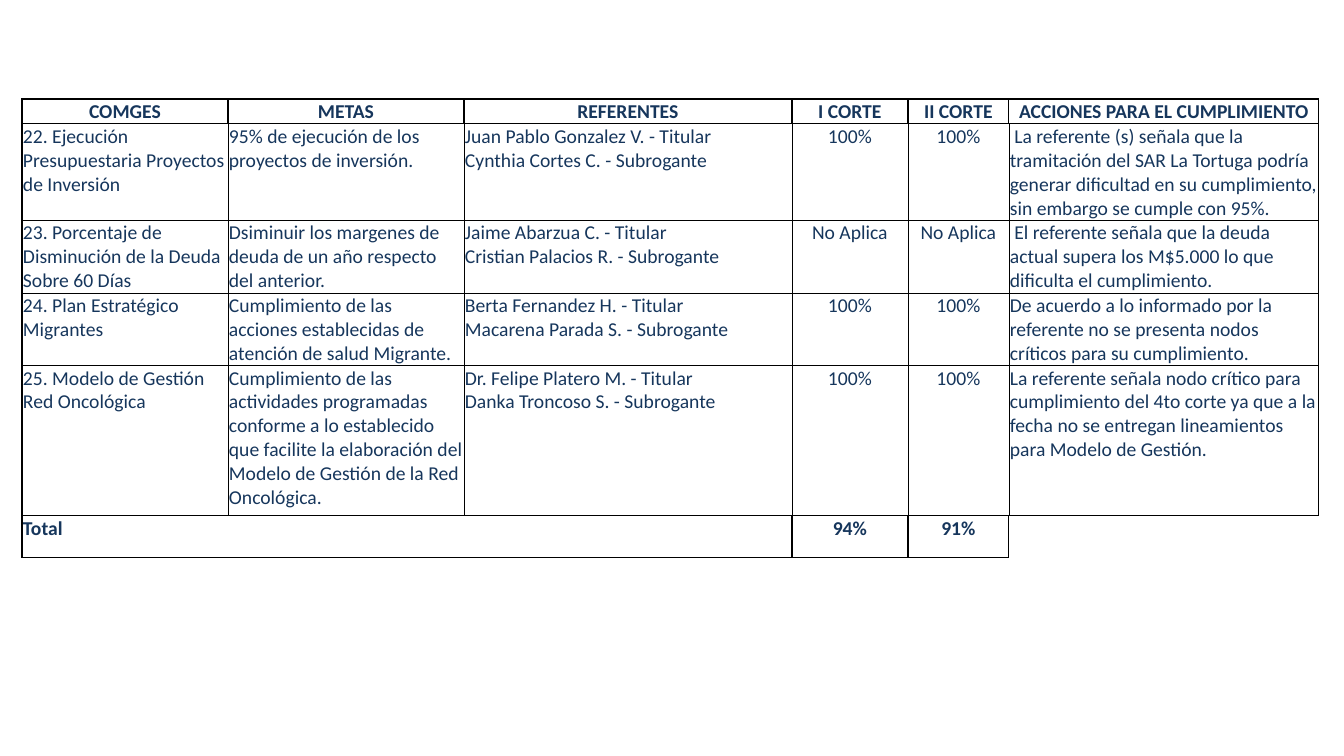
import copy

import pptx
import pptx.dml.color
import pptx.enum.text
import pptx.oxml
import pptx.oxml.ns
import pptx.util

SCALE = 914400 / 100.8
COLORS = {"text": "16365C", "line": "000000"}
ALIGN = pptx.enum.text.PP_ALIGN

HEADERS = ["COMGES", "METAS", "REFERENTES", "I CORTE", "II CORTE",
           "ACCIONES PARA EL CUMPLIMIENTO"]
GOALS = [
    ["22. Ejecución Presupuestaria Proyectos de Inversión",
     "95% de ejecución de los proyectos de inversión.",
     "Juan Pablo Gonzalez V. - Titular\nCynthia Cortes C. - Subrogante",
     "100%", "100%",
     " La referente (s) señala que la tramitación del SAR La Tortuga podría "
     "generar dificultad en su cumplimiento, sin embargo se cumple con 95%."],
    ["23. Porcentaje de Disminución de la Deuda Sobre 60 Días",
     "Dsiminuir los margenes de deuda de un año respecto del anterior.",
     "Jaime Abarzua C. - Titular\nCristian Palacios R. - Subrogante",
     "No Aplica", "No Aplica",
     " El referente señala que la deuda actual supera los M$5.000 lo que "
     "dificulta el cumplimiento."],
    ["24. Plan Estratégico Migrantes",
     "Cumplimiento de las acciones establecidas de atención de salud Migrante.",
     "Berta Fernandez H. - Titular\nMacarena Parada S. - Subrogante",
     "100%", "100%",
     "De acuerdo a lo informado por la referente no se presenta nodos críticos "
     "para su cumplimiento."],
    ["25. Modelo de Gestión Red Oncológica",
     "Cumplimiento de las actividades programadas conforme a lo establecido que "
     "facilite la elaboración del Modelo de Gestión de la Red Oncológica.",
     "Dr. Felipe Platero M. - Titular\nDanka Troncoso S. - Subrogante",
     "100%", "100%",
     "La referente señala nodo crítico para cumplimiento del 4to corte ya que a "
     "la fecha no se entregan lineamientos para Modelo de Gestión."],
]
TOTALS = ["Total", "", "", "94%", "91%", ""]
COL_WIDTHS = [206, 236, 328, 116, 101, 310]
ROW_HEIGHTS = [24, 96, 72, 72, 150, 42]


def px(n):
    return pptx.util.Emu(round(n * SCALE))


def add_text(tf, text, size=14, font="Calibri", color="text", bold=False,
             align=ALIGN.LEFT):
    p = tf.paragraphs[0]
    p.alignment = align
    for i, line in enumerate(text.split("\n")):
        if i:
            p.add_line_break()
            p._p.findall(pptx.oxml.ns.qn("a:br"))[-1].append(copy.deepcopy(r._r.rPr))
        r = p.add_run()
        r.text = line
        r.font.size = pptx.util.Pt(size)
        r.font.name = font
        r.font.bold = bold
        r.font.color.rgb = pptx.dml.color.RGBColor.from_string(COLORS[color])


class SlideBuilder:
    def __init__(self, prs):
        self.slide = prs.slides.add_slide(prs.slide_layouts[6])

    def borders(self, cell, left, right, top, bottom):
        tcPr = cell._tc.get_or_add_tcPr()
        sides = zip("LRTB", (left, right, top, bottom))
        for i, (side, width) in enumerate(sides):
            fill = (f'<a:solidFill><a:srgbClr val="{COLORS["line"]}"/></a:solidFill>'
                    if width else "<a:noFill/>")
            tcPr.insert(i, pptx.oxml.parse_xml(
                f'<a:ln{side} {pptx.oxml.ns.nsdecls("a")} w="{int(width * 12700)}">'
                f"{fill}</a:ln{side}>"))

    def table(self, x, y, col_widths, row_heights, rows):
        last_row, last_col = len(rows) - 1, len(col_widths) - 1
        table = self.slide.shapes.add_table(
            len(rows), len(col_widths), px(x), px(y),
            px(sum(col_widths)), px(sum(row_heights))).table
        table.first_row = table.horz_banding = False
        for col, width in zip(table.columns, col_widths):
            col.width = px(width)
        for row, height in zip(table.rows, row_heights):
            row.height = px(height)
        for i, texts in enumerate(rows):
            strong = i in (0, last_row)
            inner = 1 if strong else 0.5
            for j, text in enumerate(texts):
                cell = table.cell(i, j)
                cell.margin_left = cell.margin_right = cell.margin_top = px(1)
                cell.margin_bottom = 0
                cell.fill.background()
                centred = i == 0 or j in (3, 4)
                if text:
                    add_text(cell.text_frame, text, bold=strong,
                             align=ALIGN.CENTER if centred else ALIGN.LEFT)
                open_corner = i == last_row and j == last_col
                self.borders(
                    cell,
                    left=1 if j == 0 else inner,
                    right=0 if open_corner else 1 if j == last_col else inner,
                    top=1 if i in (0, 1, last_row) else 0.5,
                    bottom=0 if open_corner else
                    1 if strong or i == last_row - 1 else 0.5)
        table.cell(last_row, 0).merge(table.cell(last_row, 2))


def main():
    prs = pptx.Presentation()
    prs.slide_width, prs.slide_height = px(1344), px(756)
    s = SlideBuilder(prs)
    s.table(22, 99, COL_WIDTHS, ROW_HEIGHTS, [HEADERS, *GOALS, TOTALS])
    prs.save("out.pptx")


if __name__ == "__main__":
    main()
